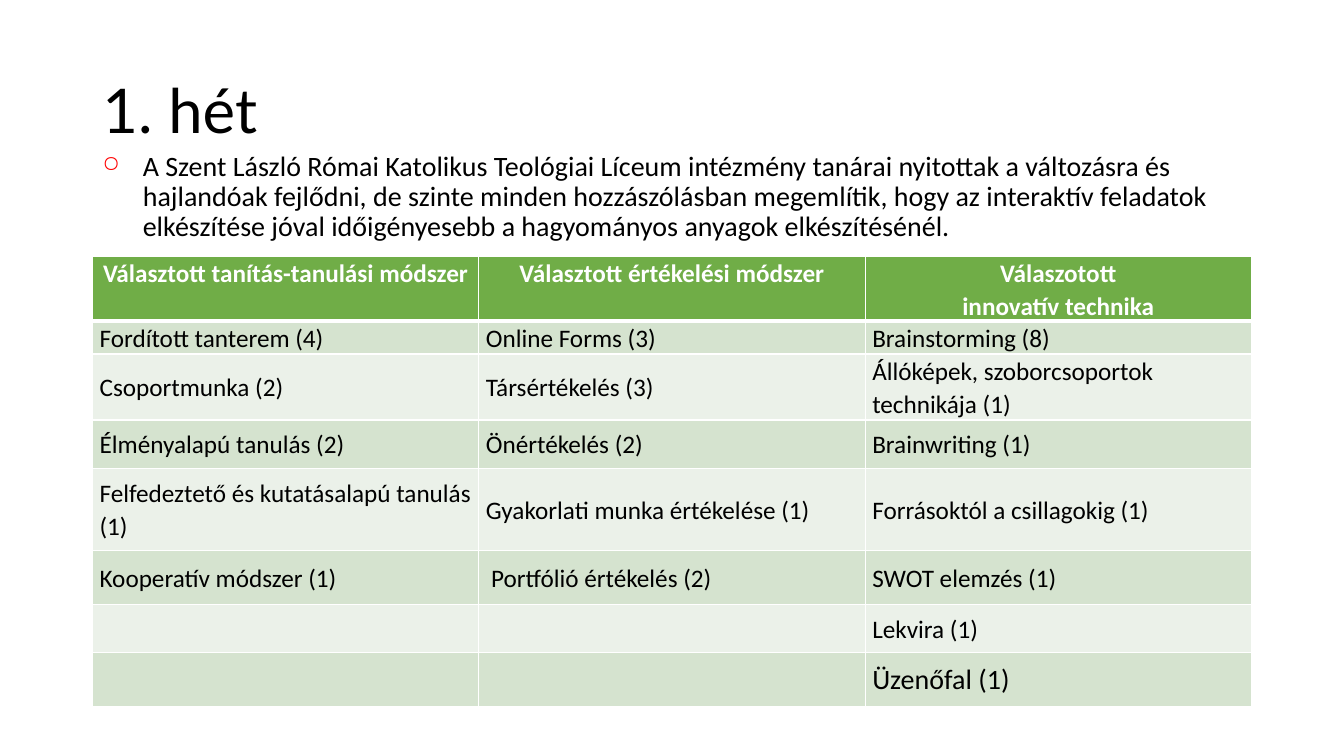
import pptx
import pptx.util
import pptx.dml.color
import pptx.enum.text
import pptx.oxml
import pptx.oxml.ns
from pptx.util import Cm

COLORS = {"text": "000000", "white": "FFFFFF", "bullet": "FF0000",
          "header": "70AD47", "odd": "D5E3CF", "even": "EBF1E9"}
ALIGN = pptx.enum.text.PP_ALIGN
ANCHOR = pptx.enum.text.MSO_ANCHOR

TITLE = {"name": "Lato", "size": pptx.util.Pt(44), "bold": False}
BODY = {"name": "Calibri", "size": pptx.util.Pt(20), "bold": False}
CELL = {**BODY, "size": pptx.util.Pt(18)}
HEADER = {**CELL, "bold": True}

INTRO = ("A Szent László Római Katolikus Teológiai Líceum intézmény tanárai "
         "nyitottak a változásra és hajlandóak fejlődni, de szinte minden "
         "hozzászólásban megemlítik, hogy az interaktív feladatok elkészítése "
         "jóval időigényesebb a hagyományos anyagok elkészítésénél.")
METHODS = [
    ("Választott tanítás-tanulási módszer", "Választott értékelési módszer",
     "Válaszotott\ninnovatív technika"),
    ("Fordított tanterem (4)", "Online Forms (3)", "Brainstorming (8)"),
    ("Csoportmunka (2)", "Társértékelés (3)",
     "Állóképek, szoborcsoportok technikája (1)"),
    ("Élményalapú tanulás (2)", "Önértékelés (2)", "Brainwriting (1)"),
    ("Felfedeztető és kutatásalapú tanulás (1)",
     "Gyakorlati munka értékelése (1)", "Forrásoktól a csillagokig (1)"),
    ("Kooperatív módszer (1)", "Portfólió értékelés (2)", "SWOT elemzés (1)"),
    ("", "", "Lekvira (1)"),
    ("", "", "Üzenőfal (1)"),
]
ROW_HEIGHTS = [1.63, 0.83, 1.66, 1.22, 2.08, 1.35, 1.22, 1.35]


def rgb(name):
    return pptx.dml.color.RGBColor.from_string(COLORS[name])


def set_font(font, values, color):
    for key, value in values.items():
        setattr(font, key, value)
    font.color.rgb = rgb(color)


def add_xml(parent, xml):
    """Append one DrawingML element, written without its namespace."""
    tag, rest = xml.split(" ", 1)
    parent.append(pptx.oxml.parse_xml(
        f"{tag} {pptx.oxml.ns.nsdecls('a')} {rest}"))


def add_text(s, box, text, values):
    tf = s.shapes.add_textbox(*box).text_frame
    tf.word_wrap = True
    p = tf.paragraphs[0]
    p.line_spacing = 0.9
    r = p.add_run()
    r.text = text
    set_font(r.font, values, "text")
    return tf


def add_title(s, box):
    add_text(s, box, "1. hét", TITLE).vertical_anchor = ANCHOR.MIDDLE


def add_intro(s, box):
    p = add_text(s, box, INTRO, BODY).paragraphs[0]
    pPr = p._p.get_or_add_pPr()
    pPr.set("marL", str(Cm(1.02)))
    pPr.set("indent", str(-Cm(1.02)))
    add_xml(pPr, f'<a:buClr ><a:srgbClr val="{COLORS["bullet"]}"/></a:buClr>')
    add_xml(pPr, '<a:buSzPct val="80000"/>')
    add_xml(pPr, '<a:buChar char="○"/>')


def fill_cell(cell, text, row, last):
    """Style one cell; row 0 is the header, last marks the bottom row."""
    header = row == 0
    tcPr = cell._tc.get_or_add_tcPr()
    for side in "LRTB":
        thick = (header and side == "B") or (row == 1 and side == "T")
        add_xml(tcPr, f'<a:ln{side} w="{38100 if thick else 12700}"><a:solidFill>'
                      f'<a:srgbClr val="{COLORS["white"]}"/></a:solidFill></a:ln{side}>')
    cell.fill.solid()
    cell.fill.fore_color.rgb = rgb(
        "header" if header else "odd" if row % 2 else "even")
    cell.vertical_anchor = ANCHOR.TOP if header else ANCHOR.MIDDLE
    cell.margin_left = cell.margin_right = Cm(0.18)
    cell.margin_top = cell.margin_bottom = 0
    cell.text = text
    values = HEADER if header else BODY if last else CELL
    for p in cell.text_frame.paragraphs:
        p.alignment = ALIGN.CENTER if header else ALIGN.LEFT
        p.line_spacing = 1.0 if last else 1.07
        for r in p.runs:
            set_font(r.font, values, "white" if header else "text")


def add_methods(s, left, top, width):
    n_rows, n_cols = len(METHODS), len(METHODS[0])
    table = s.shapes.add_table(n_rows, n_cols, left, top, width,
                               Cm(sum(ROW_HEIGHTS))).table
    for row, (texts, height) in enumerate(zip(METHODS, ROW_HEIGHTS)):
        table.rows[row].height = Cm(height)
        for col, text in enumerate(texts):
            fill_cell(table.cell(row, col), text, row, row == n_rows - 1)
    table.cell(5, 1).margin_left = Cm(0.31)


def main():
    prs = pptx.Presentation()
    prs.slide_width, prs.slide_height = Cm(33.87), Cm(19.05)
    s = prs.slides.add_slide(prs.slide_layouts[6])
    left, width = Cm(2.33), Cm(29.21)
    add_title(s, (left, Cm(1.01), width, Cm(3.68)))
    add_intro(s, (left, Cm(3.71), width, Cm(13.46)))
    add_methods(s, left, Cm(6.46), width)
    prs.save("out.pptx")


if __name__ == "__main__":
    main()
